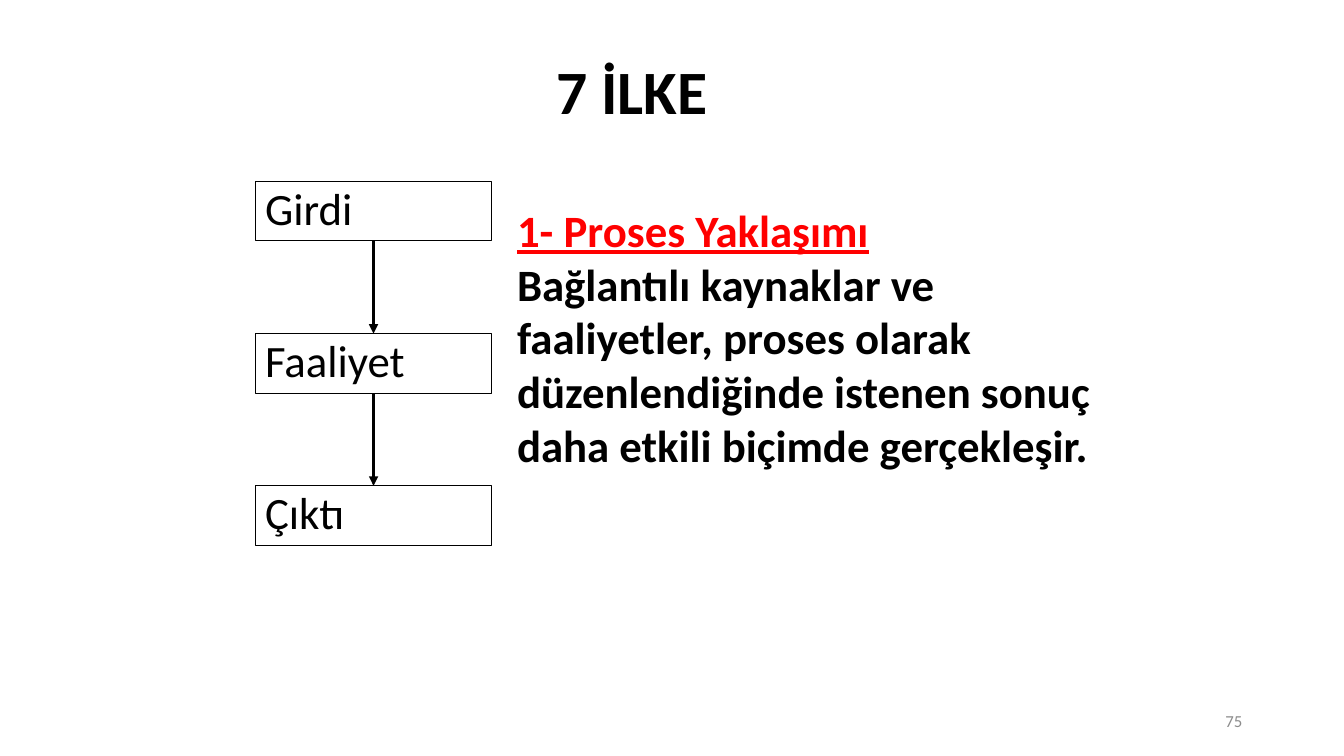
from lxml.etree import SubElement as Sub
from pptx import Presentation as Deck
from pptx.dml.color import RGBColor as RGB
from pptx.enum.shapes import MSO_CONNECTOR as Link, MSO_SHAPE as Kind
from pptx.enum.text import MSO_ANCHOR as Anchor, PP_ALIGN as Align
from pptx.oxml.ns import qn
from pptx.util import Inches as In, Pt

# Content
TITLE = "7 İLKE"
HEAD = "1- Proses Yaklaşımı"
BODY = ("Bağlantılı kaynaklar ve faaliyetler, proses olarak "
        "düzenlendiğinde istenen sonuç daha etkili biçimde gerçekleşir.")
STEPS = ["Girdi", "Faaliyet", "Çıktı"]
PAGE = "75"

# Look and grid
BLACK, RED, GRAY = RGB(0, 0, 0), RGB(255, 0, 0), RGB(0x8C, 0x8C, 0x8C)
FONT = "Calibri"
LEFT, TOP, WIDE, HIGH, PITCH = 2.53, 1.8, 2.35, 0.59, 1.51

deck = Deck()
deck.slide_width, deck.slide_height = In(13.33), In(7.5)
slide = deck.slides.add_slide(deck.slide_layouts[6])
shapes = slide.shapes


def write(para, text, size, color=BLACK, bold=False, line=False):
    run = para.add_run()
    run.text = text
    font = run.font
    font.name, font.size, font.bold = FONT, Pt(size), bold
    font.underline = line
    font.color.rgb = color


def add_text(left, top, wide, high, wrap=True):
    frame = shapes.add_textbox(In(left), In(top), In(wide), In(high)).text_frame
    frame.word_wrap = wrap
    frame.vertical_anchor = Anchor.MIDDLE
    return frame


def add_step(row, text):
    box = shapes.add_shape(Kind.RECTANGLE, In(LEFT), In(TOP + row * PITCH),
                           In(WIDE), In(HIGH))
    box.shadow.inherit = False
    box.fill.background()
    box.line.color.rgb, box.line.width = BLACK, Pt(0.75)
    frame = box.text_frame
    frame.vertical_anchor = Anchor.TOP
    para = frame.paragraphs[0]
    para.alignment, para.line_spacing = Align.LEFT, 0.9
    write(para, text, 32)
    return box


def add_arrow(start, end):
    arrow = shapes.add_connector(Link.STRAIGHT, 0, 0, 0, 0)
    arrow.begin_connect(start, 2)
    arrow.end_connect(end, 0)
    arrow.line.color.rgb, arrow.line.width = BLACK, Pt(2.25)
    Sub(arrow.line._get_or_add_ln(), qn("a:tailEnd"), type="triangle")
    Sub(arrow._element.spPr, qn("a:effectLst"))


# Title
write(add_text(5.42, 0.47, 1.72, 0.84, False).paragraphs[0], TITLE, 44, bold=True)

# Principle, set one line below the top of its box
frame = add_text(5.03, 1.41, 6.17, 4.41)
frame.vertical_anchor, frame.margin_top = Anchor.TOP, In(0.6)
write(frame.paragraphs[0], HEAD, 32, RED, True, True)
write(frame.add_paragraph(), BODY, 32, bold=True)

# Process flow
boxes = [add_step(row, text) for row, text in enumerate(STEPS)]
for start, end in zip(boxes, boxes[1:]):
    add_arrow(start, end)

# Page number
para = add_text(9.42, 6.95, 3, 0.4).paragraphs[0]
para.alignment = Align.RIGHT
write(para, PAGE, 12, GRAY)

deck.save("out.pptx")
